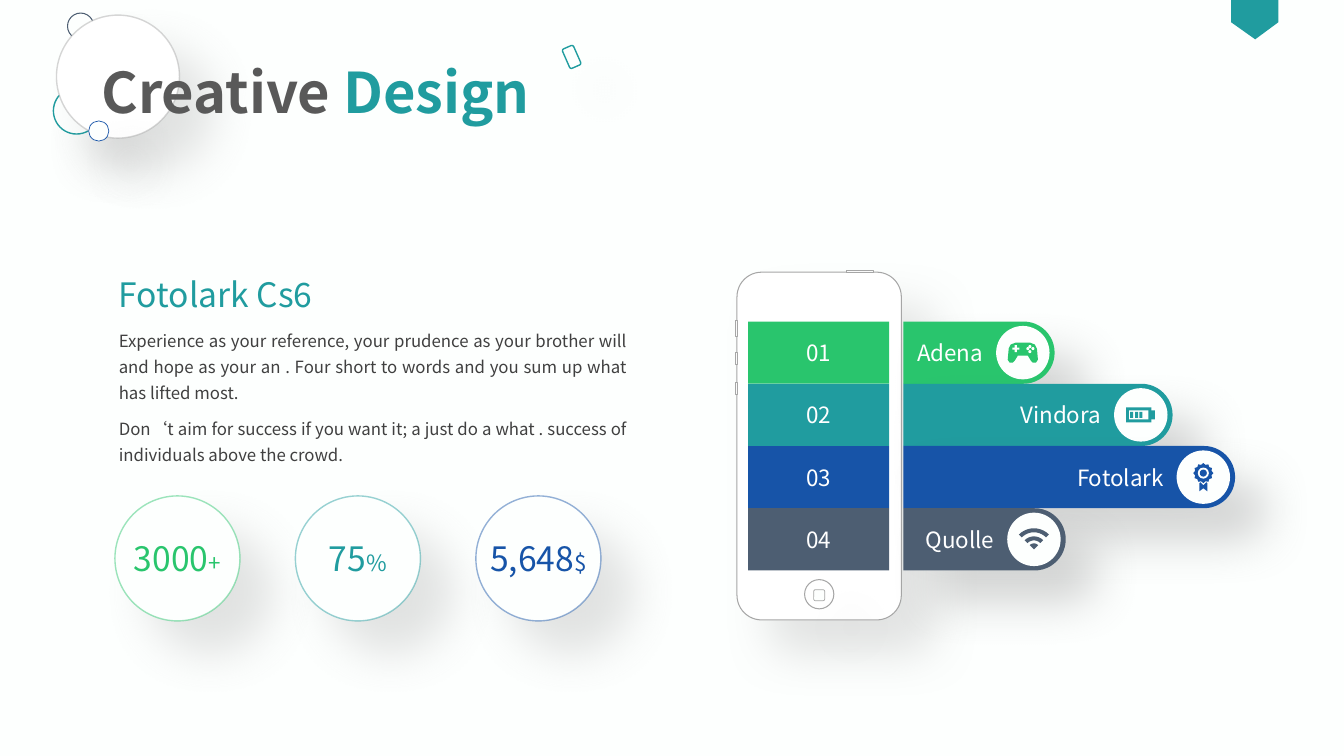
"""Build the Creative Design slide with a phone, labelled bars and figures."""
from dataclasses import dataclass
from math import cos, radians, sin

from lxml.etree import SubElement
from pptx import Presentation
from pptx.dml.color import RGBColor
from pptx.enum.shapes import MSO_SHAPE as Preset
from pptx.enum.text import MSO_ANCHOR as Anchor, MSO_AUTO_SIZE as AutoSize, PP_ALIGN as Align
from pptx.oxml.ns import qn
from pptx.util import Inches, Pt


@dataclass(frozen=True)
class Theme:
    """Colours, font and type sizes."""
    paper: str = "FDFFFE"
    white: str = "FFFFFF"
    green: str = "29C56D"
    teal: str = "209C9F"
    blue: str = "1754A8"
    slate: str = "4D5E72"
    outline: str = "A6A6A6"
    button: str = "FAFAFA"
    shade: str = "808080"
    title_ink: str = "595959"
    body_ink: str = "404040"
    font: str = "Noto Sans CJK SC"
    title: int = 40
    large: int = 24
    label: int = 16
    body: int = 12


T = Theme()
TITLE = [("Creative", T.title_ink), (" Design", T.teal)]
HEADING = "Fotolark Cs6"
PARAGRAPHS = [
    "Experience as your reference, your prudence as your brother will and hope as your an . "
    "Four short to words and you sum up what has lifted most.",
    "Don‘t aim for success if you want it; a just do a what . success of individuals above the crowd.",
]
STATS = [("3000", "+", T.green), ("75", "%", T.teal), ("5,648", "$", T.blue)]
BARS = [
    ("01", "Adena", T.green, 1.5, "gamepad"),
    ("02", "Vindora", T.teal, 2.67, "battery"),
    ("03", "Fotolark", T.blue, 3.29, "medal"),
    ("04", "Quolle", T.slate, 1.61, "signal"),
]
TITLE_RINGS = [
    (0.53, 0.87, 0.46, T.teal, 1, 100),
    (0.67, 0.13, 0.26, T.slate, 0.75, 100),
    (0.56, 0.15, 1.22, T.outline, 1, 45),
    (0.88, 1.2, 0.2, T.blue, 0.5, 100),
]
PHONE_BUTTONS = [(8.4, 2.68, 0.26, 0.02), (7.29, 3.18, 0.02, 0.16), (7.29, 3.5, 0.02, 0.12), (7.29, 3.79, 0.02, 0.12)]
PENNANT = [(12.21, 0), (12.68, 0), (12.68, 0.22), (12.45, 0.39), (12.21, 0.22)]
GAMEPAD_HALF = [(0.07, -0.1), (0.12, -0.08), (0.14, -0.04), (0.15, 0.07), (0.13, 0.1), (0.1, 0.1), (0.08, 0.08), (0.05, 0.03)]
GAMEPAD_KEYS = [(0.07, -0.06), (0.05, -0.04), (0.07, -0.01), (0.1, -0.04)]
RIBBON = [(-0.04, 0.11), (-0.03, 0.1), (0, 0.13), (0.03, 0.1), (0.04, 0.11), (0.04, 0.19), (0, 0.16), (-0.04, 0.19)]
SIGNAL_BANDS = [(0, 0.06), (0.09, 0.13), (0.17, 0.21)]
ROW_LEFT, ROW_TOP, ROW_WIDTH, ROW_HEIGHT = 7.42, 3.19, 1.4, 2.47 / 4
BAR_LEFT, DOT = 8.96, 0.53
STAT_LEFT, STAT_TOP, STAT_SIZE, STAT_STEP = 1.14, 4.92, 1.24, 1.79

prs = Presentation()
prs.slide_width, prs.slide_height = Inches(13.33), Inches(7.5)
slide = prs.slides.add_slide(prs.slide_layouts[5])
shapes = slide.shapes
slide.background.fill.solid()
slide.background.fill.fore_color.rgb = RGBColor.from_string(T.paper)


def style(shape, fill=None, line=None, weight=1, opacity=100, shadow=None, shadow_color=T.shade):
    shape.shadow.inherit = False
    if fill:
        shape.fill.solid()
        shape.fill.fore_color.rgb = RGBColor.from_string(fill)
    else:
        shape.fill.background()
    if line:
        shape.line.color.rgb = RGBColor.from_string(line)
        shape.line.width = Pt(weight)
        ink = shape.element.spPr.find(qn("a:ln")).find(".//" + qn("a:srgbClr"))
        SubElement(ink, qn("a:alpha"), val=str(opacity * 1000))
    else:
        shape.line.fill.background()
    if shadow:
        effects = shape.element.spPr.find(qn("a:effectLst"))
        cast = SubElement(effects, qn("a:outerShdw"), blurRad=str(Pt(33)), dist=str(Pt(33)),
                          dir="2700000", algn="tl", rotWithShape="0")
        ink = SubElement(cast, qn("a:srgbClr"), val=shadow_color)
        SubElement(ink, qn("a:alpha"), val=str(shadow * 1000))
    return shape


def draw(preset, left, top, width, height, adjust=(), **look):
    shape = shapes.add_shape(preset, Inches(left), Inches(top), Inches(width), Inches(height))
    for index, value in enumerate(adjust):
        shape.adjustments[index] = value
    return style(shape, **look)


def centred(preset, x, y, width, height, fill, adjust=()):
    return draw(preset, x - width / 2, y - height / 2, width, height, adjust, fill=fill)


def outline(points, fill, x=0, y=0):
    places = [(Inches(x + dx), Inches(y + dy)) for dx, dy in points]
    builder = shapes.build_freeform(*places[0], scale=1.0)
    builder.add_line_segments(places[1:], close=True)
    return style(builder.convert_to_shape(), fill)


def write(paragraph, text, size, color, bold=False):
    run = paragraph.add_run()
    run.text = text
    run.font.name, run.font.size, run.font.bold = T.font, Pt(size), bold
    run.font.color.rgb = RGBColor.from_string(color)


def text_box(left, top, width, height, anchor=Anchor.TOP):
    frame = shapes.add_textbox(Inches(left), Inches(top), Inches(width), Inches(height)).text_frame
    frame.word_wrap, frame.vertical_anchor = True, anchor
    return frame


def gamepad(x, y, color):
    mirrored = [(-dx, dy) for dx, dy in reversed(GAMEPAD_HALF)]
    outline(GAMEPAD_HALF + mirrored, color, x, y)
    centred(Preset.CROSS, x - 0.07, y - 0.04, 0.07, 0.07, T.paper, [0.35])
    for dx, dy in GAMEPAD_KEYS:
        centred(Preset.OVAL, x + dx, y + dy, 0.03, 0.03, T.paper)


def battery(x, y, color):
    for dx, width, height, fill in [(-0.02, 0.25, 0.15, color), (0.12, 0.04, 0.09, color), (-0.02, 0.19, 0.09, T.paper),
                                    (-0.09, 0.03, 0.06, color), (-0.04, 0.03, 0.06, color), (0, 0.03, 0.06, color)]:
        centred(Preset.RECTANGLE, x + dx, y, width, height, fill)


def medal(x, y, color):
    centred(Preset.STAR_12_POINT, x, y - 0.04, 0.2, 0.2, color, [0.42])
    centred(Preset.OVAL, x, y - 0.04, 0.11, 0.11, T.paper)
    centred(Preset.OVAL, x, y - 0.04, 0.07, 0.07, color)
    outline(RIBBON, color, x, y - 0.05)


def signal(x, y, color):
    sweep = [radians(angle) for angle in range(-45, 46, 9)]
    for inner, outer in SIGNAL_BANDS:
        rim = [(outer * sin(a), -outer * cos(a)) for a in sweep]
        base = [(inner * sin(a), -inner * cos(a)) for a in reversed(sweep)]
        outline(rim + base, color, x, y + 0.1)


ICONS = {"gamepad": gamepad, "battery": battery, "medal": medal, "signal": signal}


def add_phone():
    draw(Preset.ROUNDED_RECTANGLE, 7.31, 2.7, 1.63, 3.45, [0.15], fill=T.white, line=T.outline,
         weight=0.75, shadow=30, shadow_color=T.outline)
    draw(Preset.OVAL, 7.98, 5.75, 0.29, 0.29, fill=T.white, line=T.outline, weight=0.75)
    draw(Preset.ROUNDED_RECTANGLE, 8.07, 5.85, 0.11, 0.11, fill=T.paper, line=T.outline, weight=0.5, shadow=21)
    for button in PHONE_BUTTONS:
        draw(Preset.RECTANGLE, *button, fill=T.button, line=T.outline, weight=0.75)


def add_bar(index, number, label, color, length, icon):
    top = ROW_TOP + index * ROW_HEIGHT
    middle = top + ROW_HEIGHT / 2
    row = draw(Preset.RECTANGLE, ROW_LEFT, top, ROW_WIDTH, ROW_HEIGHT, fill=color).text_frame
    row.paragraphs[0].alignment = Align.CENTER
    write(row.paragraphs[0], number, T.label, T.white)
    bar = draw(Preset.ROUND_2_SAME_RECTANGLE, BAR_LEFT + (length - ROW_HEIGHT) / 2, middle - length / 2,
               ROW_HEIGHT, length, [0.5, 0], fill=color, shadow=33)
    bar.rotation = 90
    dot_left = BAR_LEFT + length - 0.58
    draw(Preset.OVAL, dot_left, middle - DOT / 2, DOT, DOT, fill=T.paper)
    ICONS[icon](dot_left + DOT / 2, middle, color)
    name = text_box(BAR_LEFT, top, dot_left - 0.03 - BAR_LEFT, ROW_HEIGHT, Anchor.MIDDLE)
    name.margin_left = 0
    name.paragraphs[0].alignment = Align.RIGHT
    write(name.paragraphs[0], label, T.label, T.white)


def add_stat(index, figure, unit, color):
    ring = draw(Preset.OVAL, STAT_LEFT + index * STAT_STEP, STAT_TOP, STAT_SIZE, STAT_SIZE,
                fill=T.paper, line=color, opacity=45, shadow=21).text_frame
    ring.word_wrap = False
    ring.margin_left = ring.margin_right = 0
    ring.paragraphs[0].alignment = Align.CENTER
    write(ring.paragraphs[0], figure, T.large, color)
    write(ring.paragraphs[0], unit, T.label, color)


def add_title():
    for left, top, size, color, weight, opacity in TITLE_RINGS:
        draw(Preset.OVAL, left, top, size, size, fill=T.white if size > 1 else T.paper,
             line=color, weight=weight, opacity=opacity, shadow=21)
    title = shapes.title
    title.left, title.top, title.width, title.height = [Inches(v) for v in (0.28, 0.52, 5.7, 0.77)]
    title.element.getparent().append(title.element)
    frame = title.text_frame
    frame.auto_size, frame.vertical_anchor = AutoSize.NONE, Anchor.TOP
    frame.paragraphs[0].alignment = Align.CENTER
    for text, color in TITLE:
        write(frame.paragraphs[0], text, T.title, color, True)
    tilted = draw(Preset.ROUNDED_RECTANGLE, 5.61, 0.46, 0.12, 0.21, line=T.teal, shadow=21)
    tilted.rotation = 336.1


def add_story():
    write(text_box(1.08, 2.67, 2.81, 0.5).paragraphs[0], HEADING, T.large, T.teal)
    story = text_box(1.08, 3.17, 5.24, 1.5)
    for index, text in enumerate(PARAGRAPHS):
        paragraph = story.add_paragraph() if index else story.paragraphs[0]
        paragraph.alignment, paragraph.line_spacing = Align.JUSTIFY, 1.3
        paragraph.space_before = Pt(7 * index)
        write(paragraph, text, T.body, T.body_ink)


def main():
    outline(PENNANT, T.teal)
    add_phone()
    for index, bar in enumerate(BARS):
        add_bar(index, *bar)
    add_story()
    for index, stat in enumerate(STATS):
        add_stat(index, *stat)
    add_title()
    prs.save("out.pptx")


if __name__ == "__main__":
    main()
